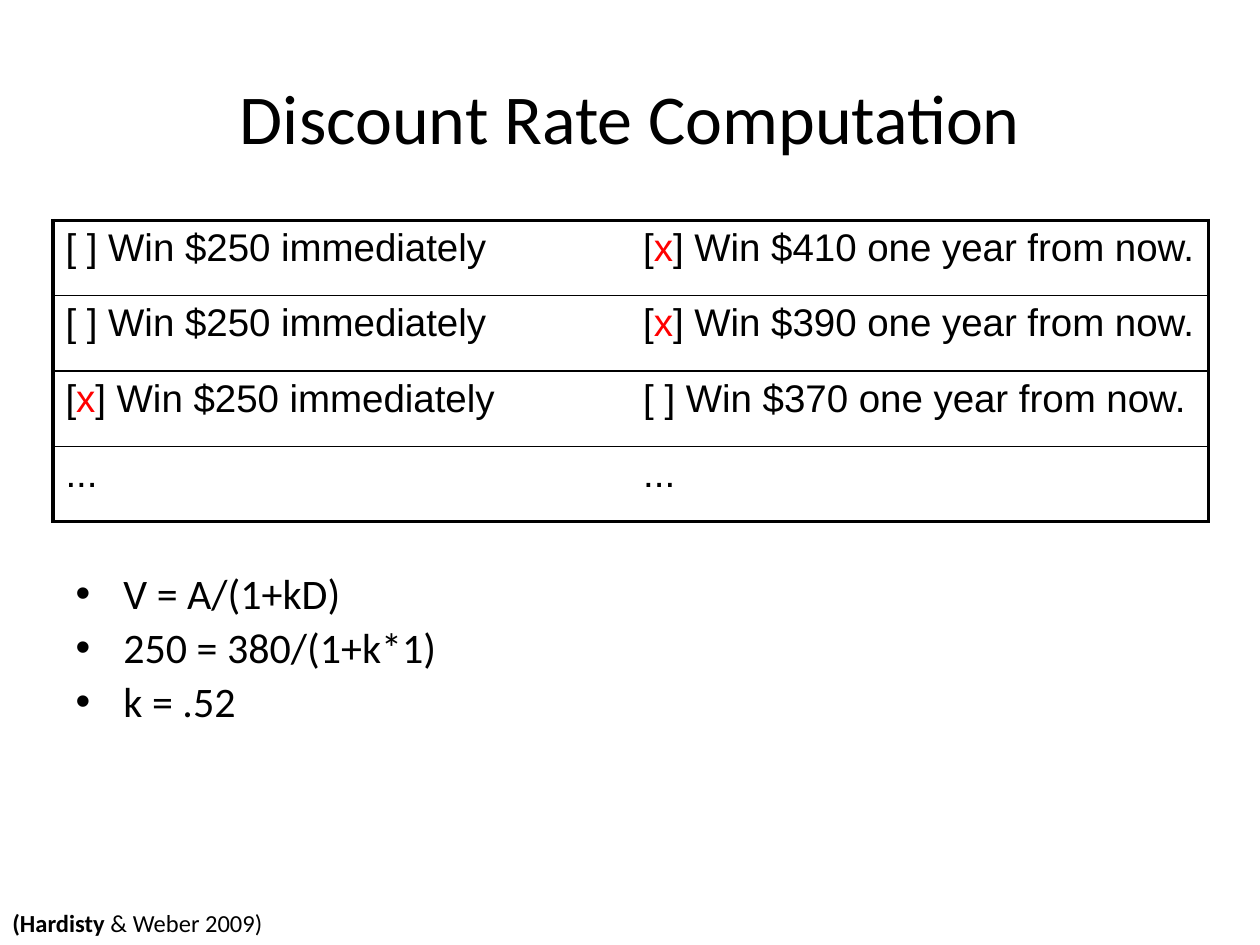
"""Build the discount rate computation slide."""
from dataclasses import dataclass

from lxml import etree
from pptx import Presentation
from pptx import util as u
from pptx.dml.color import RGBColor
from pptx.enum import text
from pptx.oxml import ns


@dataclass(frozen=True)
class Theme:
    ink: str = "000000"
    mark: str = "FF0000"
    heading_font: str = "Calibri"
    table_font: str = "Arial"
    title_size: float = 40
    body_size: float = 24
    table_size: float = 22
    source_size: float = 14
    outer_line: float = 2.25
    inner_line: float = 1


@dataclass(frozen=True)
class Span:
    words: str
    color: str = Theme.ink
    bold: bool = False


@dataclass(frozen=True)
class Choice:
    chosen: bool
    offer: str

    def spans(self) -> list[Span]:
        if self.chosen:
            return [Span("["), Span("x", THEME.mark), Span("] " + self.offer)]
        return [Span("[ ] " + self.offer)]


@dataclass(frozen=True)
class Area:
    left: float
    top: float
    width: float
    height: float

    def lengths(self) -> list[u.Length]:
        return [u.Inches(n) for n in (self.left, self.top, self.width, self.height)]


THEME = Theme()
NOW = "Win $250 immediately"
ROWS = [
    *[
        [Choice(not later, NOW).spans(), Choice(later, f"Win ${amount} one year from now.").spans()]
        for amount, later in ((410, True), (390, True), (370, False))
    ],
    [[Span("...")], [Span("...")]],
]
FORMULAS = ["V = A/(1+kD)", "250 = 380/(1+k*1)", "k = .52"]


def apply(target, values: dict) -> None:
    for name, value in values.items():
        setattr(target, name, value)


def write(para, spans: list[Span], font: str, size: float) -> None:
    for span in spans:
        run = para.add_run()
        run.text = span.words
        apply(run.font, {"name": font, "size": u.Pt(size), "bold": span.bold})
        run.font.color.rgb = RGBColor.from_string(span.color)


def place(shape, area: Area) -> None:
    apply(shape, dict(zip(("left", "top", "width", "height"), area.lengths())))


def set_borders(cell, widths: dict[str, float]) -> None:
    properties = cell._tc.get_or_add_tcPr()
    for index, (side, width) in enumerate(widths.items()):
        line = etree.Element(ns.qn(f"a:ln{side}"), w=str(u.Pt(width)))
        if width:
            fill = etree.SubElement(line, ns.qn("a:solidFill"))
            etree.SubElement(fill, ns.qn("a:srgbClr"), val=THEME.ink)
        else:
            etree.SubElement(line, ns.qn("a:noFill"))
        properties.insert(index, line)


def add_title(page) -> None:
    title = page.shapes.title
    place(title, Area(0.5, 0.3, 9, 1.25))
    title.text_frame.vertical_anchor = text.MSO_ANCHOR.MIDDLE
    para = title.text_frame.paragraphs[0]
    para.alignment = text.PP_ALIGN.CENTER
    write(para, [Span("Discount Rate Computation")], THEME.heading_font, THEME.title_size)


def add_formulas(page) -> None:
    body = page.placeholders[1]
    place(body, Area(0.5, 4.5, 9, 2.39))
    frame = body.text_frame
    for index, formula in enumerate(FORMULAS):
        para = frame.add_paragraph() if index else frame.paragraphs[0]
        apply(para, {"line_spacing": 0.9, "space_before": u.Pt(THEME.body_size * 0.2)})
        properties = para._p.get_or_add_pPr()
        properties.set("marL", str(u.Inches(0.38)))
        properties.set("indent", str(u.Inches(-0.38)))
        write(para, [Span(formula)], THEME.heading_font, THEME.body_size)


def add_choices(page) -> None:
    area = Area(0.42, 1.75, 9.17, 2.39)
    last_row, last_column = len(ROWS) - 1, len(ROWS[0]) - 1
    table = page.shapes.add_table(len(ROWS), len(ROWS[0]), *area.lengths()).table
    apply(table, {"first_row": False, "horz_banding": False})
    for r, row in enumerate(ROWS):
        for c, spans in enumerate(row):
            cell = table.cell(r, c)
            cell.fill.background()
            write(cell.text_frame.paragraphs[0], spans, THEME.table_font, THEME.table_size)
            set_borders(cell, {
                "L": 0 if c else THEME.outer_line,
                "R": THEME.outer_line if c == last_column else 0,
                "T": THEME.inner_line if r else THEME.outer_line,
                "B": THEME.outer_line if r == last_row else THEME.inner_line,
            })


def add_source(page) -> None:
    box = page.shapes.add_textbox(*Area(0, 7.16, 6.5, 0.34).lengths())
    box.text_frame.word_wrap = True
    spans = [Span("(Hardisty", bold=True), Span(" & Weber 2009)")]
    write(box.text_frame.paragraphs[0], spans, THEME.heading_font, THEME.source_size)


def main() -> None:
    deck = Presentation()
    apply(deck, {"slide_width": u.Inches(10), "slide_height": u.Inches(7.5)})
    page = deck.slides.add_slide(deck.slide_layouts[1])
    for draw in (add_title, add_formulas, add_choices, add_source):
        draw(page)
    deck.save("out.pptx")


if __name__ == "__main__":
    main()
